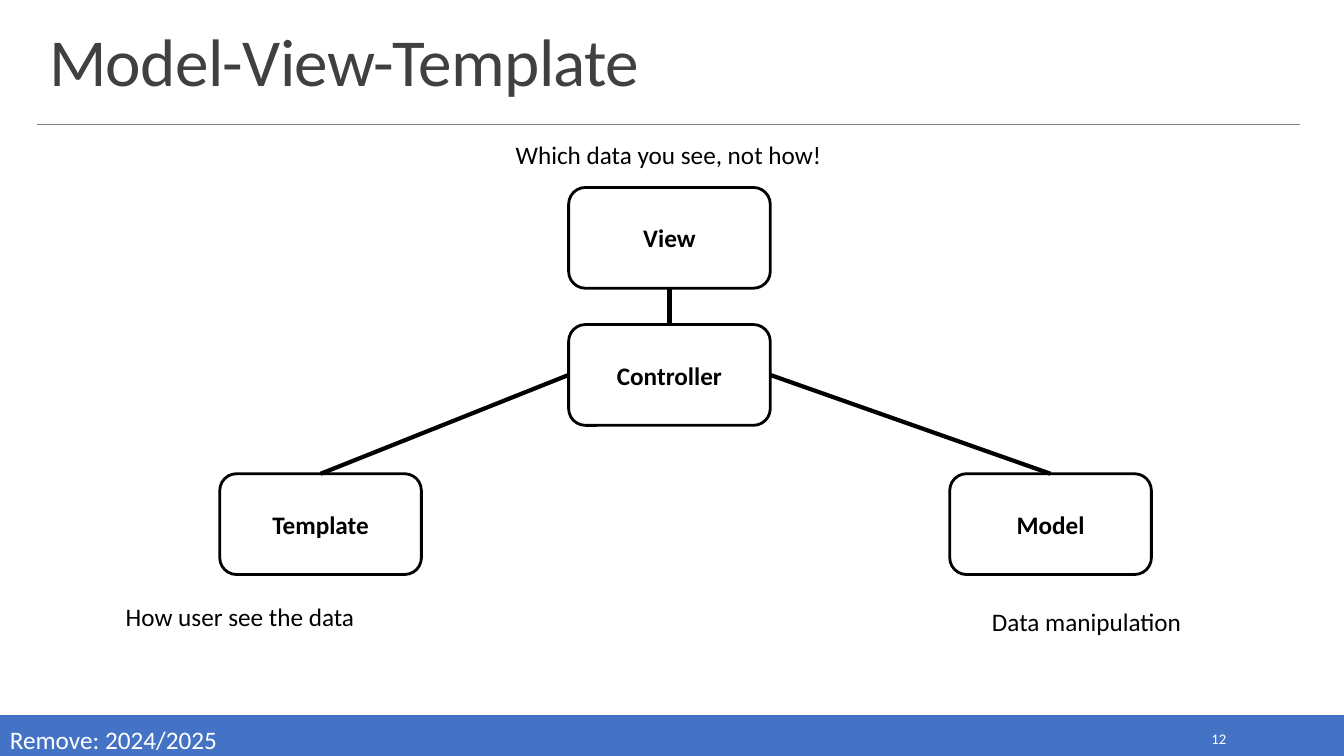
from pptx import Presentation
from pptx.dml.color import RGBColor
from pptx.enum.shapes import MSO_CONNECTOR as Link, MSO_SHAPE as Shape
from pptx.enum.text import MSO_ANCHOR as Anchor, PP_ALIGN as Align
from pptx.oxml.ns import qn
from pptx.util import Inches, Pt
from lxml.etree import SubElement

BLACK = RGBColor(0x00, 0x00, 0x00)
WHITE = RGBColor(0xFF, 0xFF, 0xFF)
BLUE = RGBColor(0x44, 0x72, 0xC4)
DARK = RGBColor(0x40, 0x40, 0x40)
GRAY = RGBColor(0x80, 0x80, 0x80)

TOP, LEFT, BOTTOM, RIGHT = range(4)
NODES = {
    "View": (5.64, 1.86),
    "Controller": (5.64, 3.22),
    "Template": (2.18, 4.7),
    "Model": (9.42, 4.7),
}
EDGES = [
    ("View", BOTTOM, "Controller", TOP),
    ("Controller", LEFT, "Template", TOP),
    ("Controller", RIGHT, "Model", TOP),
]
LABELS = [
    ("Which data you see, not how!", (4.62, 1.33, 4.02, 0.4), Align.CENTER),
    ("How user see the data", (0.37, 5.92, 4.02, 0.4), Align.CENTER),
    ("Data manipulation", (9.74, 5.97, 2.91, 0.4), Align.LEFT),
]


def write(shape, text, size=18, color=BLACK, bold=False,
          align=Align.LEFT, anchor=Anchor.TOP):
    frame = shape.text_frame
    frame.word_wrap = True
    frame.vertical_anchor = anchor
    para = frame.paragraphs[0]
    para.alignment = align
    run = para.add_run()
    run.text = text
    style = {"name": "Calibri", "size": Pt(size), "bold": bold}
    for key, value in style.items():
        setattr(run.font, key, value)
    run.font.color.rgb = color
    return para, run


def add_text(slide, text, box, **style):
    return write(slide.shapes.add_textbox(*map(Inches, box)), text, **style)


def add_box(slide, kind, box, color, width):
    shape = slide.shapes.add_shape(kind, *map(Inches, box))
    shape.shadow.inherit = False
    shape.line.color.rgb = color
    shape.line.width = Pt(width)
    return shape


def add_node(slide, name, spot):
    node = add_box(slide, Shape.ROUNDED_RECTANGLE, (*spot, 2, 1), BLACK, 2)
    node.fill.background()
    write(node, name, bold=True, align=Align.CENTER, anchor=Anchor.MIDDLE)
    return node


def add_line(slide, ends, color, width):
    line = slide.shapes.add_connector(Link.STRAIGHT, *map(Inches, ends))
    line.line.color.rgb = color
    line.line.width = Pt(width)
    SubElement(line._element.spPr, qn("a:effectLst"))
    return line


def add_frame(slide):
    bar = add_box(slide, Shape.RECTANGLE, (0, 7.1, 13.33, 0.4), BLUE, 1.25)
    bar.fill.solid()
    bar.fill.fore_color.rgb = BLUE
    add_line(slide, (0.37, 1.23, 12.89, 1.23), GRAY, 0.5)
    para, run = add_text(slide, "Model-View-Template", (0.39, 0.2, 12.52, 0.84),
                         size=48, color=DARK, anchor=Anchor.BOTTOM)
    para.line_spacing = 0.85
    run.font._element.set("spc", "-50")
    add_text(slide, "Remove: 2024/2025", (0, 7.14, 6.67, 0.4), color=WHITE)
    add_text(slide, "12", (10.83, 7.19, 1.43, 0.28), size=10.5, color=WHITE,
             align=Align.RIGHT, anchor=Anchor.MIDDLE)


def main():
    deck = Presentation()
    deck.slide_width, deck.slide_height = Inches(13.33), Inches(7.5)
    slide = deck.slides.add_slide(deck.slide_layouts[6])
    add_frame(slide)
    nodes = {name: add_node(slide, name, spot) for name, spot in NODES.items()}
    for start, out, end, into in EDGES:
        edge = add_line(slide, (0, 0, 0, 0), BLACK, 3)
        edge.begin_connect(nodes[start], out)
        edge.end_connect(nodes[end], into)
    for text, box, align in LABELS:
        add_text(slide, text, box, align=align)
    deck.save("out.pptx")


if __name__ == "__main__":
    main()
